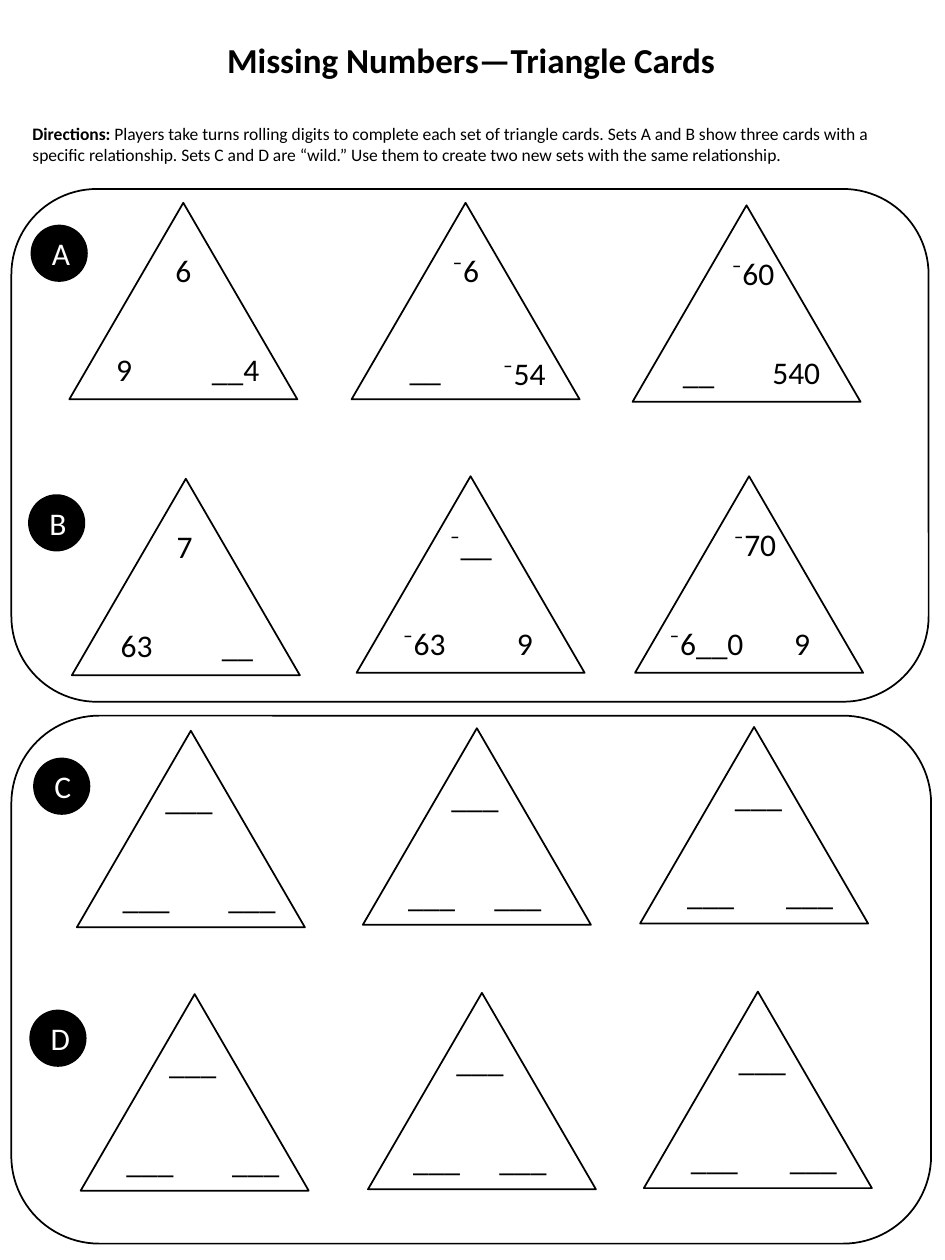
from dataclasses import dataclass

from pptx import Presentation
from pptx.dml.color import RGBColor
from pptx.enum.shapes import MSO_SHAPE as Preset
from pptx.enum.text import MSO_ANCHOR as Anchor, PP_ALIGN as Align
from pptx.util import Inches, Pt

COLUMNS, ROWS = 75, 100
WIDTH, HEIGHT = Inches(7.5), Inches(10)
BLACK, WHITE = "000000", "FFFFFF"
CARD_SIZE = (18.1, 15.6)
NUMBER_HEIGHT = 3.8
TOP_DROP, BOTTOM_DROP = 3.45, 11.3
BADGE_SIZE = 4.4


@dataclass(frozen=True)
class Number:
    text: str
    column: float
    width: float
    drop: float = BOTTOM_DROP


@dataclass(frozen=True)
class Card:
    column: float
    row: float
    numbers: tuple[Number, ...]


@dataclass(frozen=True)
class Area:
    column: float
    row: float
    width: float
    height: float

    def box(self) -> tuple[int, ...]:
        """Convert grid columns and rows to slide lengths."""
        return (round(self.column * WIDTH / COLUMNS), round(self.row * HEIGHT / ROWS),
                round(self.width * WIDTH / COLUMNS), round(self.height * HEIGHT / ROWS))


@dataclass(frozen=True)
class Badge:
    letter: str
    column: float
    row: float


def corners(top: tuple, left: tuple, right: tuple) -> tuple[Number, ...]:
    """Place the three numbers of a card at its corners."""
    return (Number(*top, TOP_DROP), Number(*left), Number(*right))


BLANK = "___"
WILD = (
    corners((BLANK, 5.55, 6.7), (BLANK, 2.35, 6.3), (BLANK, 10.4, 7)),
    corners((BLANK, 5.75, 6.3), (BLANK, 2.35, 6.2), (BLANK, 8.7, 7.2)),
    corners((BLANK, 6.1, 6.6), (BLANK, 2.35, 6.5), (BLANK, 10.05, 6.8)),
)
WILD_CORNERS = (
    ((6.1, 58), (28.8, 57.8), (50.8, 57.7)),
    ((6.4, 78.9), (29.2, 78.8), (51.1, 78.7)),
)
CARDS = (
    Card(5.5, 16.1, corners(("6", 7.1, 3.9), ("9", 2.4, 3.9), ("__4", 9.9, 6.6))),
    Card(27.9, 16.1, corners(("⁻6", 6.8, 4.5), ("__", 2.4, 6.9), ("⁻54", 10.7, 6, 11.6))),
    Card(50.2, 16.3, corners(("⁻60", 6.1, 6.9), ("__", 2.4, 5.7), ("540", 10.1, 5.8))),
    Card(5.7, 38, corners(("7", 6.2, 5.5), ("63", 2.4, 5.5), ("__", 10.4, 5.5))),
    Card(28.3, 37.8, corners(("⁻__", 6.3, 5.5), ("⁻63", 2.6, 5.5), ("9", 10.6, 5.5))),
    Card(50.4, 37.8, corners(("⁻70", 6.2, 6.6), ("⁻6__0", 1.5, 8.3), ("9", 10.5, 5.5))),
    *(Card(*corner, numbers) for line in WILD_CORNERS
      for corner, numbers in zip(line, WILD)),
)
PANELS = (Area(0.9, 15, 72.8, 40.7), Area(0.9, 56.8, 73, 41.9))
BADGES = (Badge("A", 2.5, 17.9), Badge("B", 2.3, 39.3),
          Badge("C", 2.7, 60.2), Badge("D", 2.4, 80.2))
TITLE = "Missing Numbers—Triangle Cards"
DIRECTIONS = (
    " Players take turns rolling digits to complete each set of triangle cards. "
    "Sets A and B show three cards with a specific relationship. Sets C and D are “wild.” "
    "Use them to create two new sets with the same relationship."
)


def color(value: str) -> RGBColor:
    """Turn a hex string into a colour."""
    return RGBColor.from_string(value)


def write(frame, runs: tuple, size: float = 18, ink: str = BLACK, align=Align.CENTER) -> None:
    """Write (text, bold) runs as one vertically centred paragraph."""
    frame.word_wrap = True
    frame.vertical_anchor = Anchor.MIDDLE
    paragraph = frame.paragraphs[0]
    paragraph.alignment = align
    for text, bold in runs:
        run = paragraph.add_run()
        run.text = text
        run.font.color.rgb = color(ink)
        for key, value in {"name": "Calibri", "size": Pt(size), "bold": bold}.items():
            setattr(run.font, key, value)


def draw_shape(slide, preset, area: Area, fill: str | None = WHITE, line: str = BLACK):
    """Draw a preset shape with a one-point outline."""
    shape = slide.shapes.add_shape(preset, *area.box())
    shape.shadow.inherit = False
    if fill is None:
        shape.fill.background()
    else:
        shape.fill.solid()
        shape.fill.fore_color.rgb = color(fill)
    shape.line.color.rgb = color(line)
    shape.line.width = Pt(1)
    return shape


def draw_card(slide, card: Card) -> None:
    """Draw a triangle and its corner numbers."""
    draw_shape(slide, Preset.ISOSCELES_TRIANGLE, Area(card.column, card.row, *CARD_SIZE))
    for number in card.numbers:
        area = Area(card.column + number.column, card.row + number.drop,
                    number.width, NUMBER_HEIGHT)
        label = slide.shapes.add_textbox(*area.box())
        write(label.text_frame, ((number.text, False),))


def draw_badge(slide, badge: Badge) -> None:
    """Draw the round letter of a set."""
    area = Area(badge.column, badge.row, BADGE_SIZE, BADGE_SIZE)
    disc = draw_shape(slide, Preset.OVAL, area, BLACK)
    write(disc.text_frame, ((badge.letter, False),), ink=WHITE)


def main() -> None:
    """Build the worksheet and save it."""
    deck = Presentation()
    deck.slide_width, deck.slide_height = WIDTH, HEIGHT
    slide = deck.slides.add_slide(deck.slide_layouts[6])
    heading = draw_shape(slide, Preset.RECTANGLE, Area(1.6, 1.6, 71.6, 6.2), line=WHITE)
    write(heading.text_frame, ((TITLE, True),), 20)
    directions = draw_shape(slide, Preset.RECTANGLE, Area(1.6, 8.3, 71.6, 6.2), line=WHITE)
    write(directions.text_frame, (("Directions:", True), (DIRECTIONS, False)), 10,
          align=Align.LEFT)
    for card in CARDS:
        draw_card(slide, card)
    for panel in PANELS:
        draw_shape(slide, Preset.ROUNDED_RECTANGLE, panel, None)
    for badge in BADGES:
        draw_badge(slide, badge)
    deck.save("out.pptx")


if __name__ == "__main__":
    main()
